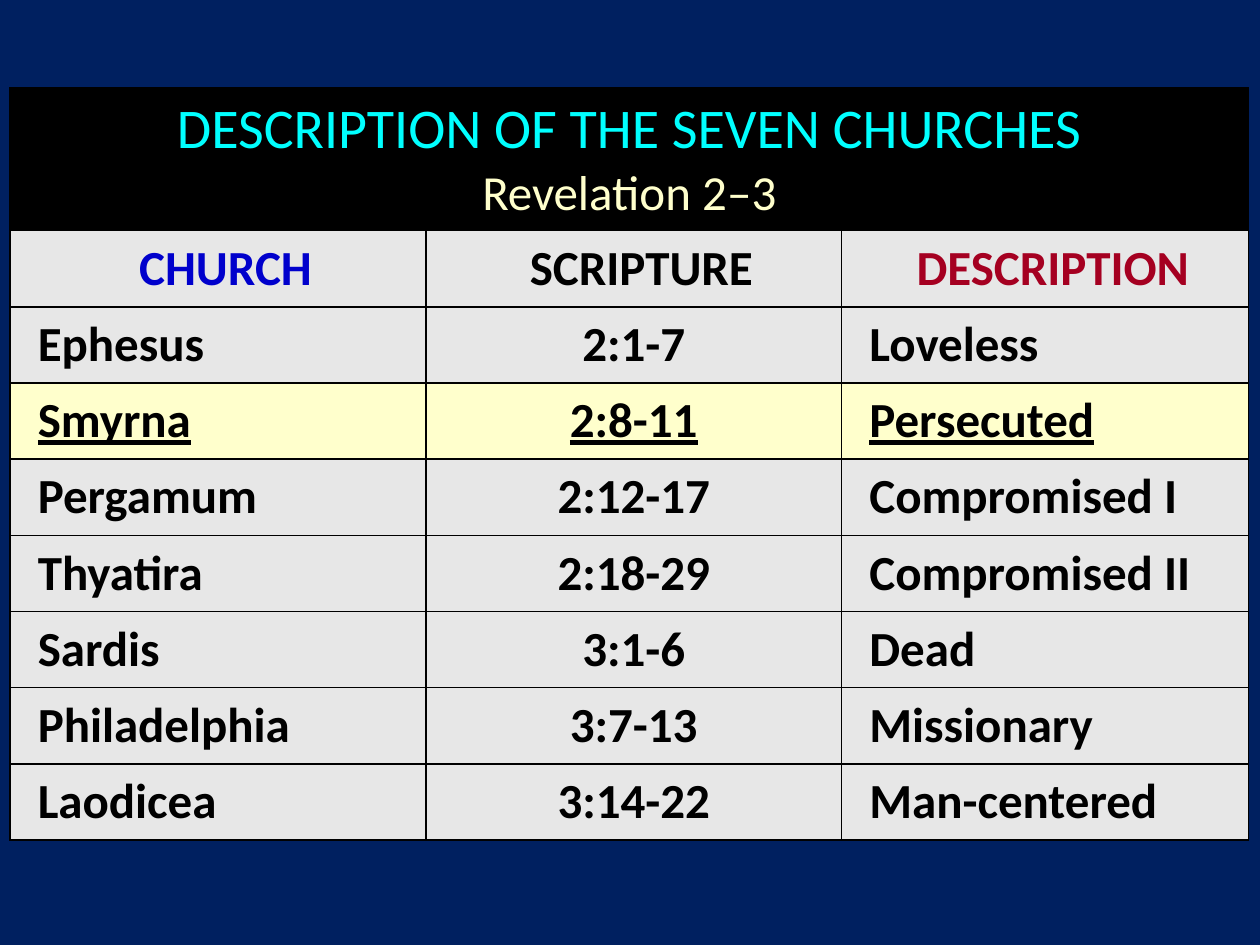
from lxml.etree import SubElement
from pptx import Presentation
from pptx.dml.color import RGBColor
from pptx.enum.text import MSO_ANCHOR, PP_ALIGN
from pptx.oxml.ns import qn
from pptx.util import Inches, Pt

WIDTH, HEIGHT = 10, 7.5
NAVY, BLACK, GREY, CREAM = "002060", "000000", "E7E7E7", "FFFFCC"
CYAN, BLUE, RED = "00FFFF", "0000CC", "A50021"

TITLE = "DESCRIPTION OF THE SEVEN CHURCHES"
PASSAGE = "Revelation 2‒3"
HEADINGS = [("CHURCH", BLUE), ("SCRIPTURE", BLACK), ("DESCRIPTION", RED)]
CHURCHES = [
    ("Ephesus", "2:1-7", "Loveless"),
    ("Smyrna", "2:8-11", "Persecuted"),
    ("Pergamum", "2:12-17", "Compromised I"),
    ("Thyatira", "2:18-29", "Compromised II"),
    ("Sardis", "3:1-6", "Dead"),
    ("Philadelphia", "3:7-13", "Missionary"),
    ("Laodicea", "3:14-22", "Man-centered"),
]
HIGHLIGHTED = "Smyrna"


def color(value):
    return RGBColor.from_string(value)


class SlideBuilder:
    font_name = "Calibri"
    text_size = 28
    indent = 0.12
    border_width = 1

    def __init__(self, presentation):
        self.slide = presentation.slides.add_slide(presentation.slide_layouts[6])

    def background(self, fill):
        self.slide.background.fill.solid()
        self.slide.background.fill.fore_color.rgb = color(fill)

    def table(self, left, top, column_widths, row_heights):
        shape = self.slide.shapes.add_table(
            len(row_heights), len(column_widths), Inches(left), Inches(top),
            Inches(sum(column_widths)), Inches(sum(row_heights)))
        table = shape.table
        for column, width in zip(table.columns, column_widths):
            column.width = Inches(width)
        for row, height in zip(table.rows, row_heights):
            row.height = Inches(height)
        return table

    def borders(self, cell):
        properties = cell._tc.get_or_add_tcPr()
        for side in ("lnL", "lnR", "lnT", "lnB"):
            line = SubElement(properties, qn(f"a:{side}"), w=str(Pt(self.border_width)))
            SubElement(SubElement(line, qn("a:solidFill")), qn("a:srgbClr"), val=BLACK)

    def cell(self, cell, text, fill, centered=False, indented=False):
        self.borders(cell)
        cell.fill.solid()
        cell.fill.fore_color.rgb = color(fill)
        cell.vertical_anchor = MSO_ANCHOR.MIDDLE
        paragraph = cell.text_frame.paragraphs[0]
        paragraph.text = text
        paragraph.alignment = PP_ALIGN.CENTER if centered else PP_ALIGN.LEFT
        if indented:
            paragraph._p.get_or_add_pPr().set("marL", str(Inches(self.indent)))
        return paragraph.runs

    def style(self, run, text_color=BLACK, size=text_size, bold=True, underline=False):
        run.font.name = self.font_name
        run.font.size = Pt(size)
        run.font.bold = bold
        run.font.underline = underline
        run.font.color.rgb = color(text_color)


def main():
    presentation = Presentation()
    presentation.slide_width, presentation.slide_height = Inches(WIDTH), Inches(HEIGHT)
    builder = SlideBuilder(presentation)
    builder.background(NAVY)

    # Table grid: a tall title row above equal rows
    title_height, table_height = 1.13, 5.97
    body_rows = len(CHURCHES) + 1
    row_height = (table_height - title_height) / body_rows
    table = builder.table(0.08, 0.7, [3.3, 3.3, 3.23],
                          [title_height] + [row_height] * body_rows)

    # Title row across all columns
    table.cell(0, 0).merge(table.cell(0, 2))
    title, passage = builder.cell(table.cell(0, 0), f"{TITLE}\v{PASSAGE}", BLACK, centered=True)
    builder.style(title, CYAN, size=32, bold=False)
    builder.style(passage, CREAM, bold=False)
    for column in (1, 2):
        builder.borders(table.cell(0, column))

    # Column headings
    for column, (heading, heading_color) in enumerate(HEADINGS):
        for run in builder.cell(table.cell(1, column), heading, GREY,
                                centered=True, indented=True):
            builder.style(run, heading_color)

    # One row per church
    for row, church in enumerate(CHURCHES, start=2):
        highlighted = church[0] == HIGHLIGHTED
        for column, text in enumerate(church):
            is_scripture = column == 1
            for run in builder.cell(table.cell(row, column), text,
                                    CREAM if highlighted else GREY,
                                    centered=is_scripture, indented=not is_scripture):
                builder.style(run, underline=highlighted)

    presentation.save("out.pptx")


if __name__ == "__main__":
    main()
